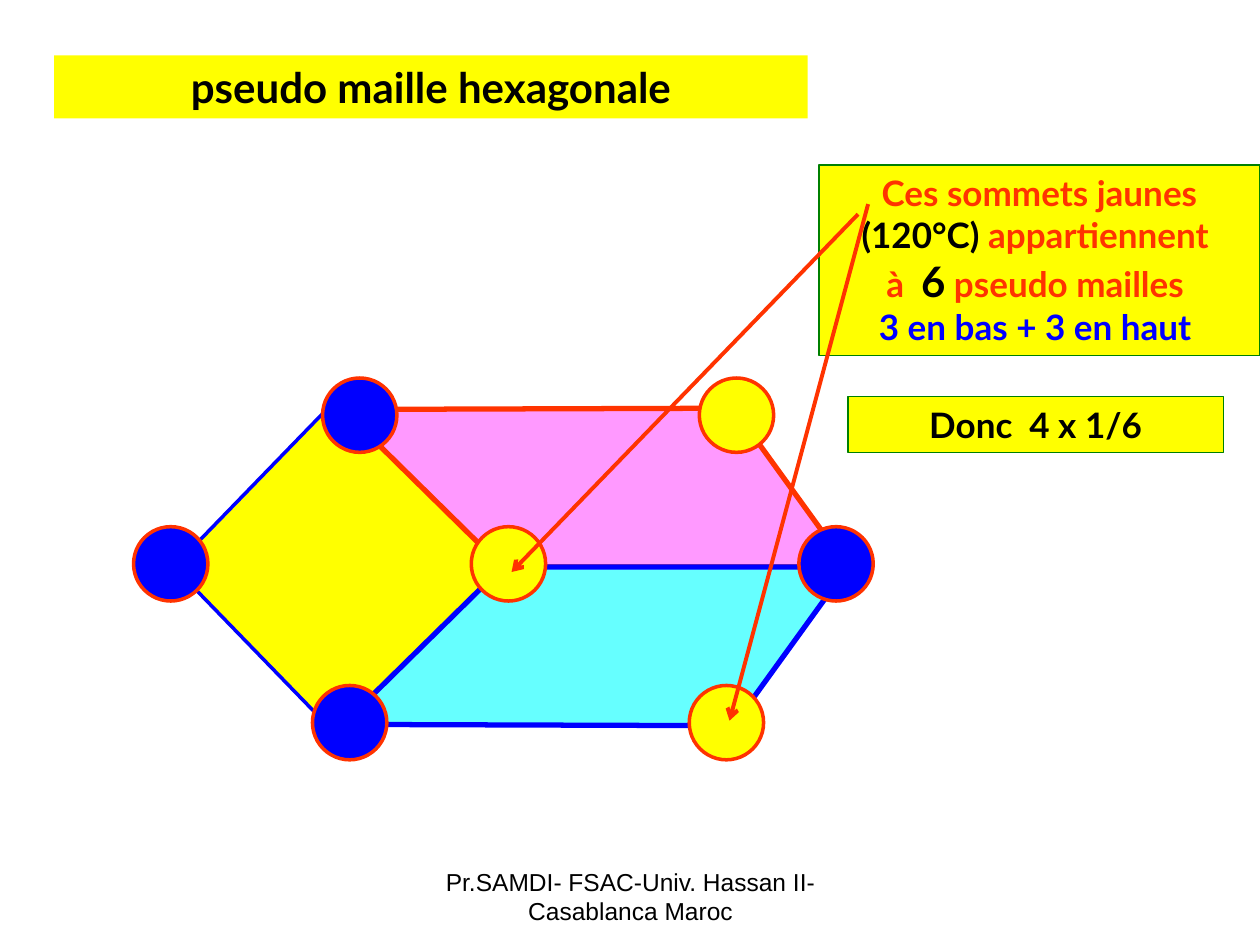
from lxml import etree
from pptx import Presentation
from pptx import util as u
from pptx.dml import color
from pptx.enum import shapes, text
from pptx.oxml import ns

COLORS = {
    "yellow": "FFFF00", "blue": "0000FF", "red": "FF3300", "pink": "FF99FF",
    "cyan": "66FFFF", "green": "008000", "black": "000000",
}
NODE_SIZE = 0.59
BODY = {"name": "Lato", "size": u.Pt(20), "bold": True}
LARGE = {**BODY, "size": u.Pt(24)}
FOOTER = {"name": "Arial", "size": u.Pt(14), "bold": False}


def rgb(name):
    """Return the named colour."""
    return color.RGBColor.from_string(COLORS[name])


def inches(values):
    """Convert numbers to inch lengths."""
    return [u.Inches(value) for value in values]


def paint(shape, fill, line=None, width=0.75):
    """Set the fill and outline of a shape without shadow."""
    shape.shadow.inherit = False
    shape.fill.solid()
    shape.fill.fore_color.rgb = rgb(fill)
    if line:
        shape.line.color.rgb = rgb(line)
        shape.line.width = u.Pt(width)
    else:
        shape.line.fill.background()


def add_preset(slide, kind, box, *style):
    """Add a painted preset shape in the given box."""
    shape = slide.shapes.add_shape(kind, *inches(box))
    paint(shape, *style)
    return shape


def write(shape, paragraphs, anchor=text.MSO_ANCHOR.TOP):
    """Fill a shape with centred paragraphs of (text, colour, format) runs."""
    frame = shape.text_frame
    frame.word_wrap = True
    frame.vertical_anchor = anchor
    for index, runs in enumerate(paragraphs):
        paragraph = frame.add_paragraph() if index else frame.paragraphs[0]
        paragraph.alignment = text.PP_ALIGN.CENTER
        for content, tint, formats in runs:
            if content == "\n":
                paragraph.add_line_break()
                continue
            run = paragraph.add_run()
            run.text = content
            run.font.color.rgb = rgb(tint)
            for key, value in formats.items():
                setattr(run.font, key, value)


def add_label(slide, box, paragraphs, line=None, anchor=text.MSO_ANCHOR.TOP):
    """Add a yellow rectangle with text."""
    shape = add_preset(slide, shapes.MSO_SHAPE.RECTANGLE, box, "yellow", line)
    write(shape, paragraphs, anchor)


def add_face(slide, points, fill, line):
    """Add a closed polygon through the given points."""
    start, *others = [tuple(inches(point)) for point in points]
    builder = slide.shapes.build_freeform(*start, scale=1.0)
    builder.add_line_segments(others, close=True)
    paint(builder.convert_to_shape(), fill, line, 3)


def add_arrow(slide, start, end):
    """Add a red arrow from start to end."""
    arrow = slide.shapes.add_connector(
        shapes.MSO_CONNECTOR.STRAIGHT, *inches(start + end))
    arrow.line.color.rgb = rgb("red")
    arrow.line.width = u.Pt(2.25)
    etree.SubElement(arrow.line._get_or_add_ln(), ns.qn("a:tailEnd"), type="arrow")
    etree.SubElement(arrow._element.spPr, ns.qn("a:effectLst"))


def add_title(slide, box):
    """Add the title bar."""
    add_label(slide, box, [[("pseudo maille hexagonale", "black", LARGE)]],
              anchor=text.MSO_ANCHOR.MIDDLE)


def add_cell(slide, box):
    """Add the faces and nodes of the cell within the box."""
    left, top, width, height = box

    def place(points):
        """Move points from box to slide coordinates."""
        return [(left + x, top + y) for x, y in points]

    add_preset(slide, shapes.MSO_SHAPE.DIAMOND, (left + 0.32, top + 0.16, 2.6, 2.68),
               "yellow", "blue", 2)
    upper = [(2.93, 1.5), (1.66, 0.25), (4.76, 0.24), (5.67, 1.5)]
    lower = [(x, height - 0.03 - y) for x, y in upper]
    add_face(slide, place(upper), "pink", "red")
    add_face(slide, place(lower), "cyan", "blue")
    bottom = height - NODE_SIZE
    right = width - NODE_SIZE
    nodes = {
        "blue": [(1.42, bottom), (right, 1.18), (1.5, 0), (0, 1.18)],
        "yellow": [(4.41, bottom), (4.49, 0), (2.68, 1.18)],
    }
    for fill, corners in nodes.items():
        for x, y in place(corners):
            add_preset(slide, shapes.MSO_SHAPE.OVAL, (x, y, NODE_SIZE, NODE_SIZE),
                       fill, "red", 2)


def add_explanation(slide, box):
    """Add the note on the yellow corners."""
    add_label(slide, box, [
        [("Ces sommets jaunes ", "red", BODY), ("(120°C)", "black", BODY),
         (" appartiennent ", "red", BODY), ("\n", "red", BODY),
         ("à  ", "red", BODY), ("6", "black", LARGE),
         (" pseudo mailles ", "red", BODY)],
        [("3 en bas + 3 en haut ", "blue", BODY)],
    ], "green")


def add_result(slide, box):
    """Add the resulting count."""
    add_label(slide, box, [[("Donc  4 x 1/6", "black", BODY)]], "green")


def add_footer(slide, box):
    """Add the footer text."""
    shape = slide.shapes.add_textbox(*inches(box))
    write(shape, [[("Pr.SAMDI- FSAC-Univ. Hassan II- Casablanca Maroc",
                    "black", FOOTER)]])


def main():
    """Build and save the presentation."""
    presentation = Presentation()
    presentation.slide_width = u.Inches(10)
    presentation.slide_height = u.Inches(7.5)
    slide = presentation.slides.add_slide(presentation.slide_layouts[6])
    add_title(slide, (0.43, 0.44, 5.98, 0.5))
    add_cell(slide, (1.06, 3, 5.87, 3.03))
    add_explanation(slide, (6.5, 1.31, 3.5, 1.51))
    add_arrow(slide, (6.81, 1.7), (4.06, 4.54))
    add_arrow(slide, (6.89, 1.62), (5.79, 5.72))
    add_result(slide, (6.73, 3.15, 2.98, 0.44))
    add_footer(slide, (3.42, 6.83, 3.17, 0.52))
    presentation.save("out.pptx")


if __name__ == "__main__":
    main()
